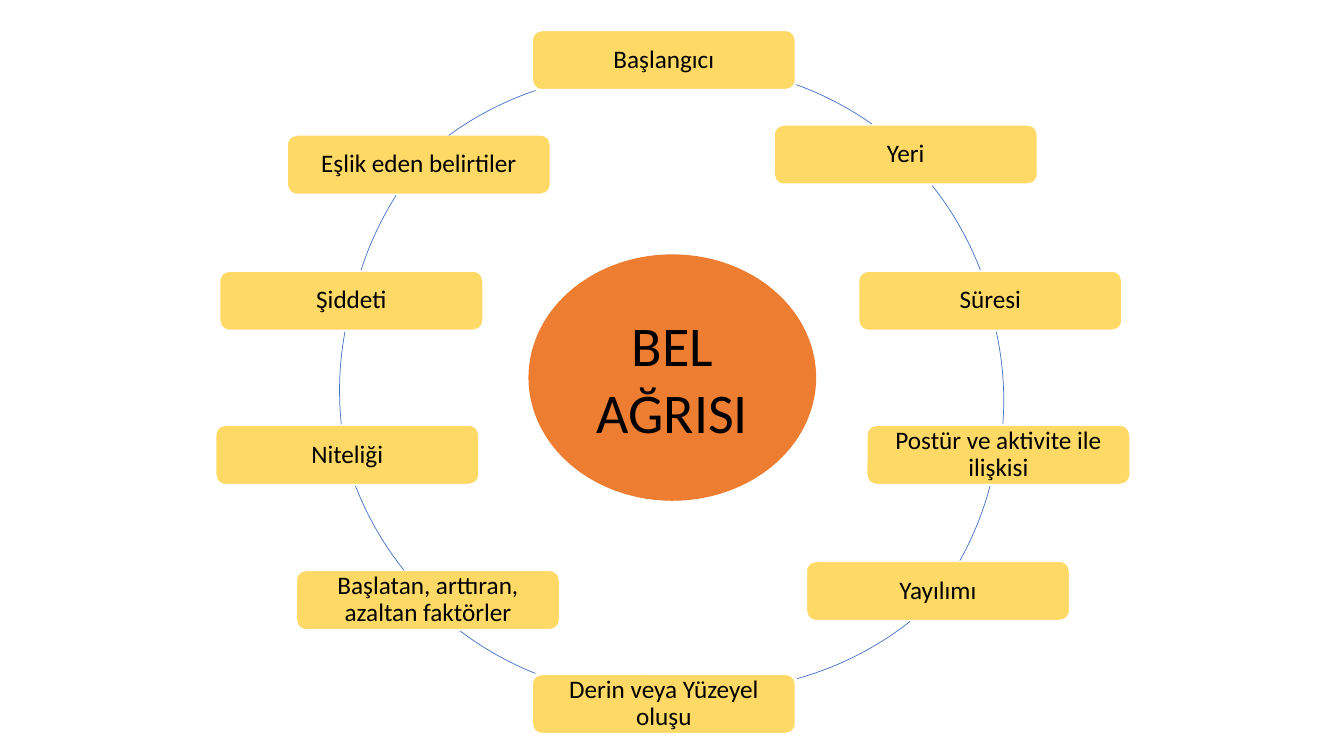
from dataclasses import dataclass
from math import atan2, degrees

from pptx import Presentation
from pptx.dml.color import RGBColor
from pptx.enum.shapes import MSO_SHAPE
from pptx.enum.text import MSO_ANCHOR, PP_ALIGN
from pptx.shapes.autoshape import Shape
from pptx.slide import Slide
from pptx.util import Pt

YELLOW = RGBColor(0xFF, 0xD9, 0x66)
ORANGE = RGBColor(0xED, 0x7D, 0x31)
BLUE = RGBColor(0x44, 0x72, 0xC4)
WHITE = RGBColor(0xFF, 0xFF, 0xFF)
BLACK = RGBColor(0x00, 0x00, 0x00)

FONT = "Calibri"
BOX_W, BOX_H = 188, 42.3
RADIUS = 230


@dataclass(frozen=True)
class Topic:
    text: str
    left: float
    top: float


@dataclass(frozen=True)
class Arc:
    left: float
    top: float
    start: tuple[float, float]
    end: tuple[float, float]

    def angle(self, point: tuple[float, float]) -> float:
        dx = point[0] - self.left - RADIUS
        dy = point[1] - self.top - RADIUS
        return degrees(atan2(dy, dx)) % 360


TOPICS = [
    Topic("Başlangıcı", 380.2, 21.8),
    Topic("Yeri", 553, 89.3),
    Topic("Süresi", 613.4, 193.7),
    Topic("Postür ve aktivite ile ilişkisi", 619.2, 303.8),
    Topic("Yayılımı", 576, 401),
    Topic("Derin veya Yüzeyel oluşu", 380.2, 481.7),
    Topic("Başlatan, arttıran, azaltan faktörler", 211.7, 407.5),
    Topic("Niteliği", 154.1, 303.8),
    Topic("Şiddeti", 157, 193.7),
    Topic("Eşlik eden belirtiler", 205.2, 96.5),
]

ARCS = [
    Arc(260.6, 46.8, (568.8, 60.5), (622.8, 88.6)),
    Arc(255.6, 45.4, (666, 132.5), (700.6, 193)),
    Arc(257, 56.2, (712.1, 236.9), (717.1, 303.1)),
    Arc(254.9, 58.3, (707, 347), (685.4, 401)),
    Arc(277.9, 33.1, (650.2, 444.2), (569.5, 485.3)),
    Arc(237.6, 37.4, (382.3, 481.7), (328.3, 450.7)),
    Arc(238.3, 33.8, (288.7, 407.5), (254.2, 347)),
    Arc(242.6, 49, (244.1, 303.1), (247, 236.9)),
    Arc(247, 33.1, (257.8, 193), (283, 139.7)),
    Arc(226.1, 52.6, (320.4, 96.5), (382.3, 64.1)),
]


def add_outlined(s: Slide, kind: MSO_SHAPE, left: float, top: float,
                 width: float, height: float, line: RGBColor, weight: float) -> Shape:
    sp = s.shapes.add_shape(kind, Pt(left), Pt(top), Pt(width), Pt(height))
    sp.shadow.inherit = False
    sp.line.color.rgb = line
    sp.line.width = Pt(weight)
    return sp


def fill_and_label(sp: Shape, text: str, fill: RGBColor, size: float) -> None:
    sp.fill.solid()
    sp.fill.fore_color.rgb = fill
    tf = sp.text_frame
    tf.word_wrap = True
    tf.vertical_anchor = MSO_ANCHOR.MIDDLE
    tf.text = text
    p = tf.paragraphs[0]
    p.alignment = PP_ALIGN.CENTER
    r = p.runs[0]
    r.font.name = FONT
    r.font.size = Pt(size)
    r.font.color.rgb = BLACK


def add_topic(s: Slide, topic: Topic) -> None:
    sp = add_outlined(s, MSO_SHAPE.ROUNDED_RECTANGLE, topic.left, topic.top,
                      BOX_W, BOX_H, WHITE, 1)
    fill_and_label(sp, topic.text, YELLOW, 18)
    tf = sp.text_frame
    tf.margin_left = tf.margin_right = tf.margin_top = tf.margin_bottom = Pt(5)
    tf.paragraphs[0].line_spacing = 0.9


def add_arc(s: Slide, arc: Arc) -> None:
    sp = add_outlined(s, MSO_SHAPE.ARC, arc.left, arc.top,
                      2 * RADIUS, 2 * RADIUS, BLUE, 0.5)
    sp.fill.background()
    for i, point in enumerate((arc.start, arc.end)):
        sp.adjustments[i] = arc.angle(point) * 0.6


def main() -> None:
    prs = Presentation()
    prs.slide_width, prs.slide_height = Pt(960), Pt(540)
    s = prs.slides.add_slide(prs.slide_layouts[6])
    for topic, arc in zip(TOPICS, ARCS):
        add_topic(s, topic)
        add_arc(s, arc)
    center = add_outlined(s, MSO_SHAPE.OVAL, 378, 182.2, 204.5, 175, ORANGE, 1)
    fill_and_label(center, "BEL AĞRISI", ORANGE, 40)
    prs.save("out.pptx")


if __name__ == "__main__":
    main()
